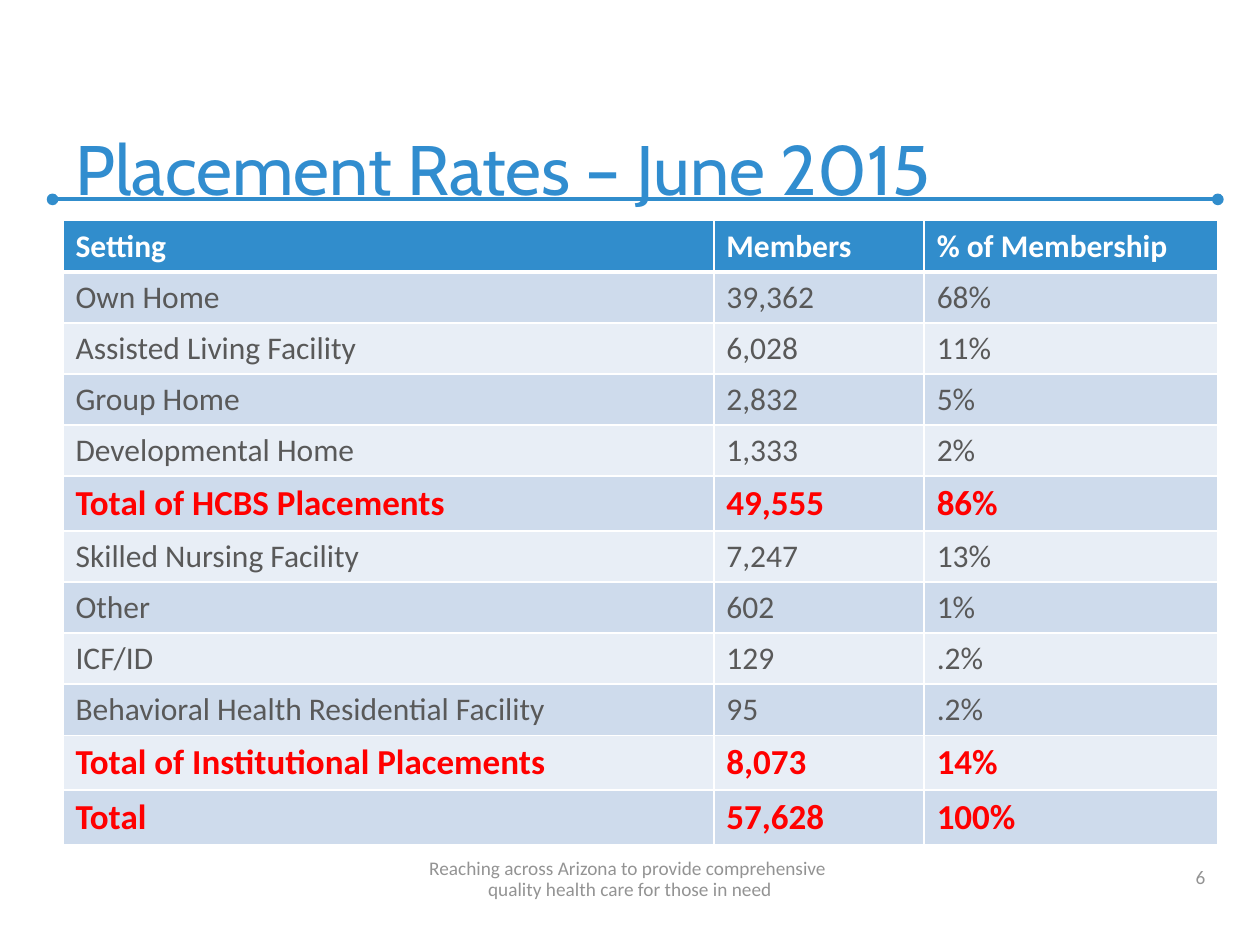
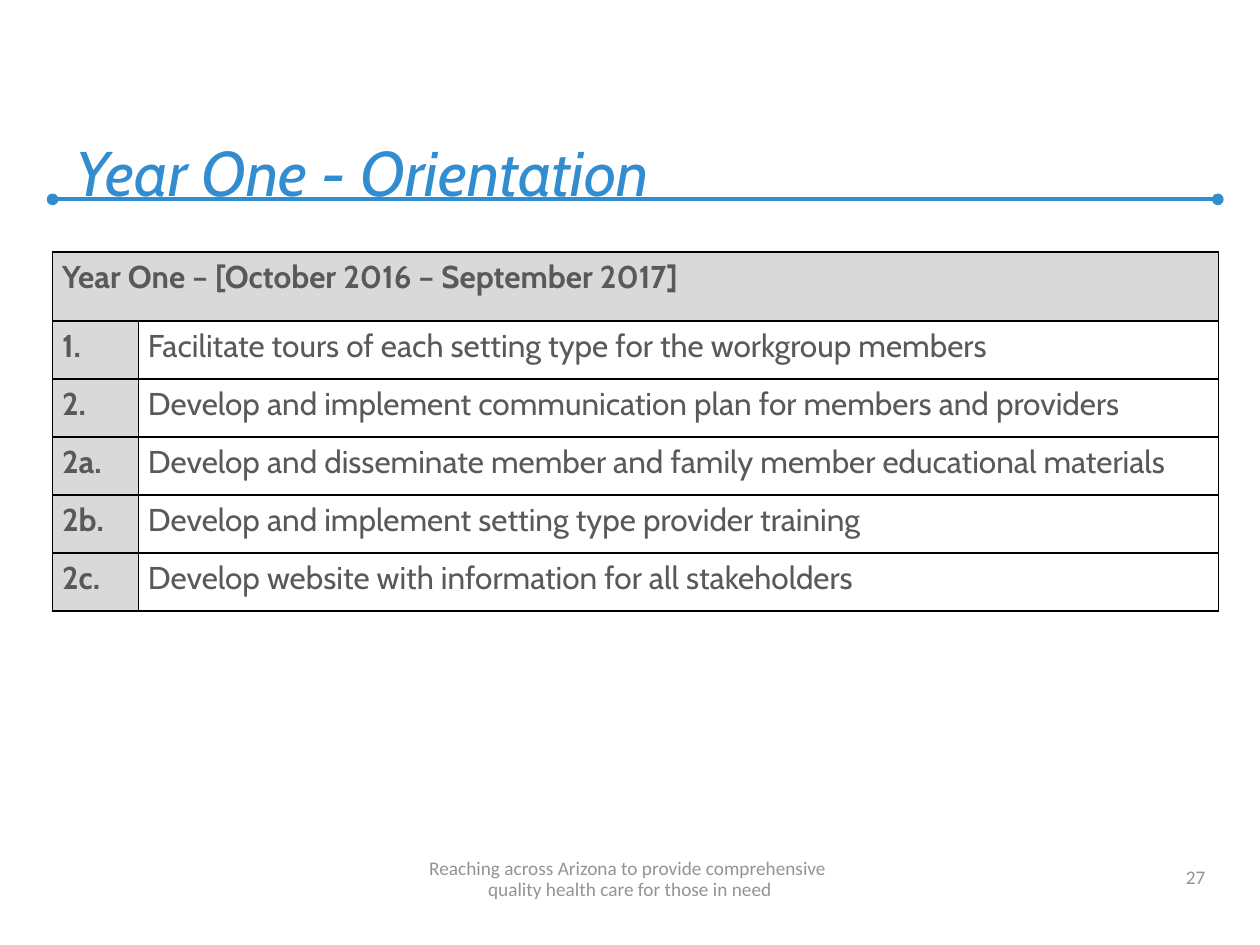
import lxml.etree
import pptx
import pptx.dml.color
import pptx.enum.shapes
import pptx.enum.text
import pptx.oxml
import pptx.oxml.ns
import pptx.util

Cm = pptx.util.Cm
Pt = pptx.util.Pt
Align = pptx.enum.text.PP_ALIGN
Anchor = pptx.enum.text.MSO_ANCHOR

COLORS = {
    "rule": "318DCC",
    "title": "318DCF",
    "text": "595959",
    "footer": "939393",
    "total": "FF0000",
    "white": "FFFFFF",
    "black": "000000",
    "band_dark": "CEDBEC",
    "band_light": "E8EEF6",
    "gray": "D9D9D9",
}


def set_font(para, name, size, color, bold=False, italic=False):
    para.font.name = name
    para.font.size = Pt(size)
    para.font.bold = bold
    para.font.italic = italic
    para.font.color.rgb = pptx.dml.color.RGBColor.from_string(COLORS[color])


def style_cell(cell, line_color, fill_color, top=1, bottom=1):
    properties = cell._tc.get_or_add_tcPr()
    for side, width in (("L", 1), ("R", 1), ("T", top), ("B", bottom)):
        properties.append(pptx.oxml.parse_xml(
            f'<a:ln{side} {pptx.oxml.ns.nsdecls("a")} w="{Pt(width)}"><a:solidFill>'
            f'<a:srgbClr val="{COLORS[line_color]}"/></a:solidFill></a:ln{side}>'))
    if fill_color:
        cell.fill.solid()
        cell.fill.fore_color.rgb = pptx.dml.color.RGBColor.from_string(COLORS[fill_color])
    else:
        cell.fill.background()


deck = pptx.Presentation()
deck.slide_width = Cm(25.4)
deck.slide_height = Cm(19.05)

FOOTER = "Reaching across Arizona to provide comprehensive \vquality health care for those in need"
pages = []
for title, size, italic, number in (
    ("Placement Rates – June 2015", 40, False, "6"),
    ("Year One - Orientation", 36, True, "27"),
):
    page = deck.slides.add_slide(deck.slide_layouts[5])
    pages.append(page)

    rule = page.shapes.add_connector(
        pptx.enum.shapes.MSO_CONNECTOR.STRAIGHT, Cm(1.06), Cm(4.02), Cm(24.55), Cm(4.02))
    rule.line.width = Pt(2.25)
    rule.line.color.rgb = pptx.dml.color.RGBColor.from_string(COLORS["rule"])
    for end in ("a:headEnd", "a:tailEnd"):
        lxml.etree.SubElement(rule.line._get_or_add_ln(), pptx.oxml.ns.qn(end), type="oval")
    lxml.etree.SubElement(rule._element.spPr, pptx.oxml.ns.qn("a:effectLst"))
    page.shapes._spTree.insert(2, rule._element)

    heading = page.shapes.title
    heading.left, heading.top, heading.width, heading.height = Cm(1.27), Cm(0.85), Cm(23.07), Cm(3.37)
    frame = heading.text_frame
    frame.text = title
    frame.auto_size = pptx.enum.text.MSO_AUTO_SIZE.NONE
    frame.vertical_anchor = Anchor.BOTTOM
    frame.margin_bottom = 0
    frame.paragraphs[0].alignment = Align.LEFT
    set_font(frame.paragraphs[0], "Cabin", size, "title", italic=italic)

    for text, left, width, height, alignment, spacing in (
        (number, 18.63, 5.92, 0.82, Align.RIGHT, None),
        (FOOTER, 0, 25.4, 1.06, Align.CENTER, Pt(12)),
    ):
        box = page.shapes.add_textbox(Cm(left), Cm(17.22), Cm(width), Cm(height))
        box.text_frame.word_wrap = True
        box.text_frame.vertical_anchor = Anchor.BOTTOM
        para = box.text_frame.paragraphs[0]
        para.text = text
        para.alignment = alignment
        para.line_spacing = spacing
        set_font(para, "Calibri", 11, "footer")

placements = [
    ("Setting", "Members", "% of Membership"),
    ("Own Home", "39,362", "68%"),
    ("Assisted Living Facility", "6,028", "11%"),
    ("Group Home", "2,832", "5%"),
    ("Developmental Home", "1,333", "2%"),
    ("Total of HCBS Placements", "49,555", "86%"),
    ("Skilled Nursing Facility", "7,247", "13%"),
    ("Other", "602", "1%"),
    ("ICF/ID", "129", ".2%"),
    ("Behavioral Health Residential Facility", "95", ".2%"),
    ("Total of Institutional Placements", "8,073", "14%"),
    ("Total", "57,628", "100%"),
]
table = pages[0].shapes.add_table(
    len(placements), 3, Cm(1.27), Cm(4.45), Cm(23.28), Cm(1.03 * len(placements))).table
table.first_row = table.horz_banding = False
for column, width in zip(table.columns, (13.12, 4.24, 5.92)):
    column.width = Cm(width)
for row, values in enumerate(placements):
    if row == 0:
        fill, font = "rule", (18, "white", True)
    else:
        fill = "band_dark" if row % 2 else "band_light"
        font = (20, "total", True) if values[0].startswith("Total") else (18, "text", False)
    for column, value in enumerate(values):
        cell = table.cell(row, column)
        style_cell(cell, "white", fill, top=3 if row == 1 else 1, bottom=3 if row == 0 else 1)
        cell.text = value
        set_font(cell.text_frame.paragraphs[0], "Calibri", *font)

tasks = [
    ("Year One – [October 2016 – September 2017]", ""),
    ("1.", "Facilitate tours of each setting type for the workgroup members"),
    ("2.", "Develop and implement communication plan for members and providers"),
    ("2a.", "Develop and disseminate member and family member educational materials"),
    ("2b.", "Develop and implement setting type provider training"),
    ("2c.", "Develop website with information for all stakeholders"),
]
table = pages[1].shapes.add_table(len(tasks), 2, Cm(1.06), Cm(5.08), Cm(23.5), Cm(7.24)).table
table.first_row = table.horz_banding = False
table.columns[0].width, table.columns[1].width = Cm(1.73), Cm(21.77)
for row, values in enumerate(tasks):
    table.rows[row].height = Cm(1.17 if row else 1.39)
    for column, value in enumerate(values):
        cell = table.cell(row, column)
        label = row == 0 or column == 0
        style_cell(cell, "black", "gray" if label else None)
        cell.margin_left = cell.margin_right = Cm(0.19)
        cell.margin_top = cell.margin_bottom = 0
        cell.text = value
        para = cell.text_frame.paragraphs[0]
        para.alignment = Align.JUSTIFY if label else Align.LEFT
        para.line_spacing = 1.15
        para.space_after = Pt(10)
        set_font(para, "Cabin", 18, "text", bold=label)
table.cell(0, 0).merge(table.cell(0, 1))

deck.save("out.pptx")
